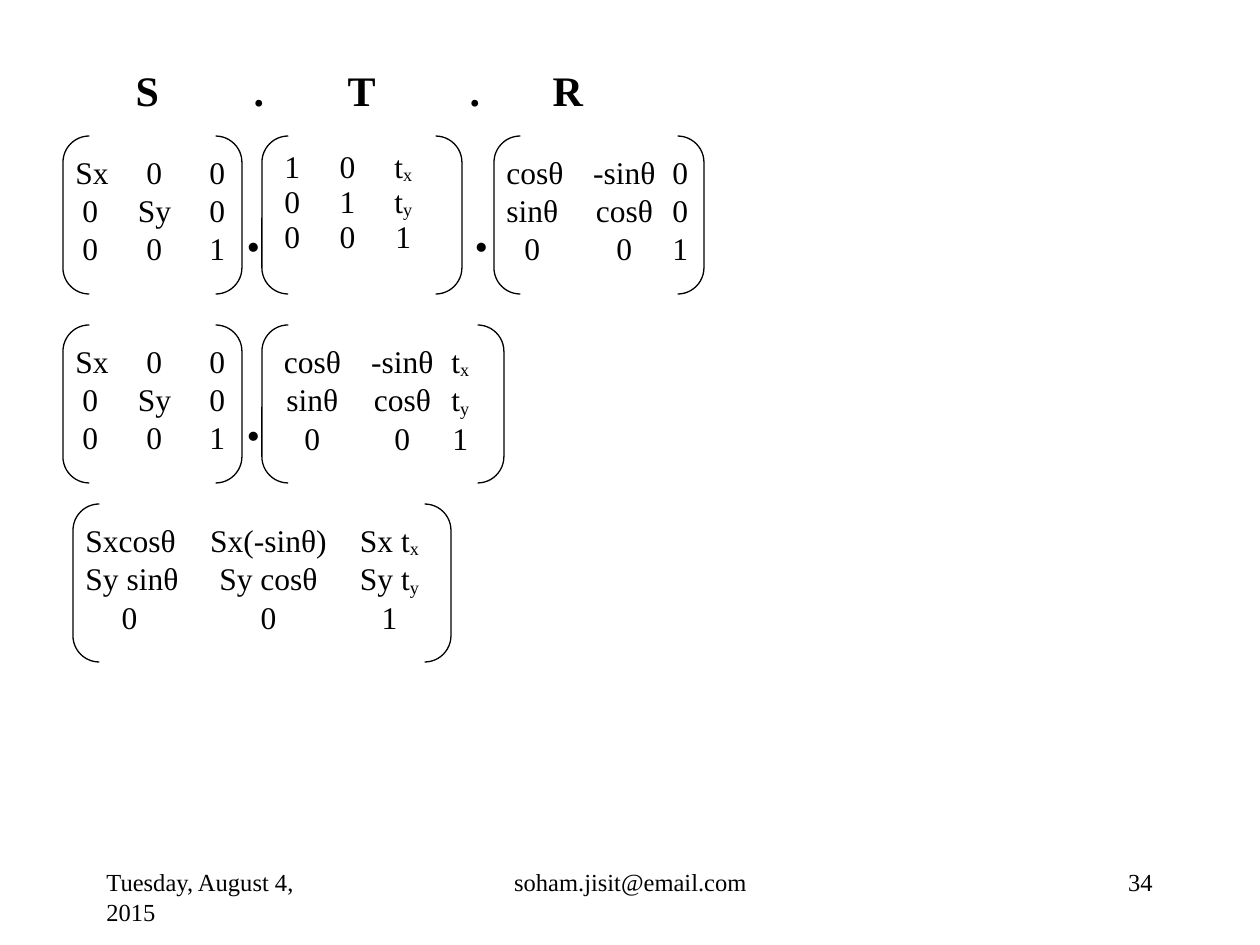
import pptx
import pptx.util
import pptx.dml.color
import pptx.enum.shapes
import pptx.enum.text
import pptx.oxml.ns
import lxml.etree

PX = 914400 // 126
INSET = 13
FONT = "Times New Roman"
BLACK = pptx.dml.color.RGBColor(0, 0, 0)
ALIGN = pptx.enum.text.PP_ALIGN
ROW_GAP = 189

SCALE = [("Sx", "0", "0"), ("0", "Sy", "0"), ("0", "0", "1")]
SHIFT = [("1", "0", "t_x"), ("0", "1", "t_y"), ("0", "0", "1")]
TURN = [("cosθ", "-sinθ", "0"), ("sinθ", "cosθ", "0"), ("0", "0", "1")]
MOVE = [("cosθ", "-sinθ", "t_x"), ("sinθ", "cosθ", "t_y"), ("0", "0", "1")]
FULL = [("Sxcosθ", "Sx(-sinθ)", "Sx t_x"),
        ("Sy sinθ", "Sy cosθ", "Sy t_y"), ("0", "0", "1")]


def px(*nums):
    return [pptx.util.Emu(num * PX) for num in nums]


def style(para, size, bold=False, align=ALIGN.LEFT):
    para.alignment = align
    font = para.font
    font.name, font.size, font.bold = FONT, pptx.util.Pt(size), bold
    font.color.rgb = BLACK


def set_tabs(para, stops, kind):
    """Add tab stops, given in px from the start of the text."""
    qn = pptx.oxml.ns.qn
    tabs = lxml.etree.SubElement(para._p.get_or_add_pPr(), qn("a:tabLst"))
    for stop in stops:
        lxml.etree.SubElement(tabs, qn("a:tab"), pos=str(stop * PX), algn=kind)


def add_box(slide, x, y, w, h):
    frame = slide.shapes.add_textbox(*px(x, y, w, h)).text_frame
    frame.word_wrap = True
    return frame


def add_label(slide, x, y, w, h, text, size, bold=False, align=ALIGN.LEFT):
    para = add_box(slide, x, y, w, h).paragraphs[0]
    para.text = text
    style(para, size, bold, align)
    return para


def add_cell(para, text):
    """Write one entry; what follows an underscore is a subscript."""
    base, _, sub = text.partition("_")
    para.add_run().text = "\t" + base
    if sub:
        run = para.add_run()
        run.text = sub
        run._r.get_or_add_rPr().set("baseline", "-10000")


def add_matrix(slide, x, y, w, rows, mids, tight=False):
    """Draw brackets and rows of entries centred on the mids (px)."""
    shape = slide.shapes.add_shape(
        pptx.enum.shapes.MSO_SHAPE.DOUBLE_BRACKET, *px(x, y, w, 158))
    shape.shadow.inherit = False
    shape.fill.background()
    shape.line.color.rgb = BLACK
    shape.line.width = pptx.util.Pt(0.75)

    frame = add_box(slide, x, y + (21 if tight else 11), w + 20, 126)
    for num, row in enumerate(rows):
        para = frame.add_paragraph() if num else frame.paragraphs[0]
        set_tabs(para, [mid - x - INSET for mid in mids], "ctr")
        style(para, 18)
        if tight:
            para.line_spacing = 0.5
            para.space_before = pptx.util.Pt(9)
        for text in row:
            add_cell(para, text)


def add_dot(slide, x, y):
    para = add_label(slide, x, y, 49, 79, ".", 32, True)
    para.space_before = pptx.util.Pt(16)


def add_title(slide):
    title = slide.shapes.title
    title.left, title.top, title.width, title.height = px(123, 58, 500, 63)
    frame = title.text_frame
    frame.vertical_anchor = pptx.enum.text.MSO_ANCHOR.TOP
    frame.auto_size = pptx.enum.text.MSO_AUTO_SIZE.NONE
    para = frame.paragraphs[0]
    set_tabs(para, [118, 212, 334, 417], "l")
    para.text = "S\t.\tT\t.\tR"
    style(para, 24, True)


def main():
    deck = pptx.Presentation()
    deck.slide_width, deck.slide_height = px(1260, 945)
    slide = deck.slides.add_slide(deck.slide_layouts[5])
    add_title(slide)

    # Scale matrix and dot open the first two rows
    top = 136
    for y in (top, top + ROW_GAP):
        add_matrix(slide, 63, y, 179, SCALE, (91, 155, 218))
        add_dot(slide, 234, y + 53)

    # Row one: shift and turn
    add_matrix(slide, 262, top, 200, SHIFT, (293, 348, 404), tight=True)
    add_dot(slide, 462, top + 53)
    add_matrix(slide, 494, top, 210, TURN, (533, 625, 681))

    # Row two: shift and turn combined
    add_matrix(slide, 262, top + ROW_GAP, 242, MOVE, (313, 403, 461))

    # Row three: full product
    add_matrix(slide, 73, 504, 378, FULL, (130, 269, 390))

    # Footer
    for x, w, text, align in (
            (94, 262, "Tuesday, August 4, 2015", ALIGN.LEFT),
            (431, 399, "soham.jisit@email.com", ALIGN.CENTER),
            (903, 262, "34", ALIGN.RIGHT)):
        add_label(slide, x, 861, w, 63, text, 14, align=align)

    deck.save("out.pptx")


if __name__ == "__main__":
    main()
